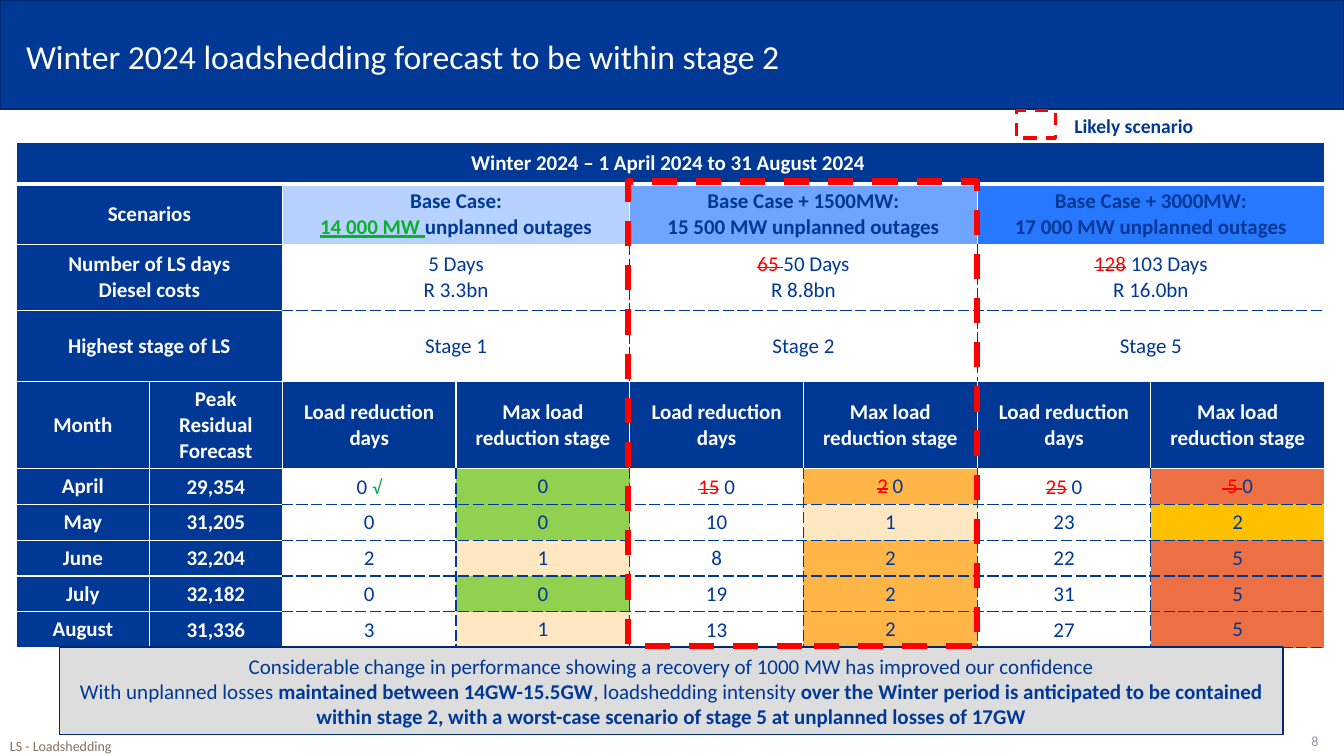
from lxml.etree import SubElement
from pptx import Presentation
from pptx.dml.color import RGBColor
from pptx.enum.dml import MSO_LINE as Dash
from pptx.enum.shapes import MSO_SHAPE as Preset
from pptx.enum.text import MSO_ANCHOR as Anchor, PP_ALIGN as Align
from pptx.oxml.ns import qn
from pptx.util import Pt

COLORS = {
    "navy": "003896", "outline": "00296F", "white": "FFFFFF", "red": "FF0000",
    "grey": "DDDDDD", "brown": "83725B", "lilac": "8C91B8", "lime": "0DAF2B",
    "check": "00B050", "pale": "B7D2FF", "sky": "6FA5FF", "azure": "2778FF",
    "green": "92D050", "cream": "FFE7C1", "orange": "FFB646", "amber": "FFC000",
    "rust": "EC7043",
}


class SlideBuilder:
    """Hold the deck style and the slide being built."""

    font_name = "Calibri"

    def __init__(self, presentation):
        self.slide = presentation.slides.add_slide(presentation.slide_layouts[6])

    def color(self, name):
        return RGBColor.from_string(COLORS[name])

    def set_text(self, frame, paragraphs, size=15, color="navy", bold=False, align=Align.CENTER):
        for index, content in enumerate(paragraphs):
            paragraph = frame.add_paragraph() if index else frame.paragraphs[0]
            paragraph.alignment = align
            font = paragraph.font
            font.name, font.size, font.bold = self.font_name, Pt(size), bold
            font.color.rgb = self.color(color)
            for piece in [content] if isinstance(content, str) else content:
                text, style = (piece, {}) if isinstance(piece, str) else piece
                run = paragraph.add_run()
                run.text = text
                if "color" in style:
                    run.font.color.rgb = self.color(style["color"])
                if "size" in style:
                    run.font.size = Pt(style["size"])
                if "bold" in style:
                    run.font.bold = style["bold"]
                if "underline" in style:
                    run.font.underline = True
                if "strike" in style:
                    run._r.get_or_add_rPr().set("strike", "sngStrike")

    def text(self, box, content, anchor=Anchor.TOP, spacing=None, **style):
        frame = self.slide.shapes.add_textbox(*map(Pt, box)).text_frame
        frame.word_wrap = True
        frame.vertical_anchor = anchor
        self.set_text(frame, [content], **style)
        frame.paragraphs[0].line_spacing = spacing

    def rectangle(self, box, line, width=1, fill=None, dash=None, paragraphs=()):
        shape = self.slide.shapes.add_shape(Preset.RECTANGLE, *map(Pt, box))
        shape.shadow.inherit = False
        if fill:
            shape.fill.solid()
            shape.fill.fore_color.rgb = self.color(fill)
        else:
            shape.fill.background()
        shape.line.color.rgb = self.color(line)
        shape.line.width = Pt(width)
        shape.line.dash_style = dash
        shape.text_frame.vertical_anchor = Anchor.MIDDLE
        self.set_text(shape.text_frame, paragraphs)

    def table(self, left, top, widths, heights):
        box = map(Pt, (left, top, sum(widths), sum(heights)))
        table = self.slide.shapes.add_table(len(heights), len(widths), *box).table
        table.first_row = table.horz_banding = False
        for column, width in zip(table.columns, widths):
            column.width = Pt(width)
        for row, height in zip(table.rows, heights):
            row.height = Pt(height)
        return table

    def cell(self, table, row, column, paragraphs, fill, sides, span=1, tight=False,
             bottom=1, **style):
        cell = table.cell(row, column)
        if span > 1:
            cell.merge(table.cell(row, column + span - 1))
        for offset in range(span):
            self.borders(table.cell(row, column + offset), fill, sides, bottom)
        cell.fill.solid()
        cell.fill.fore_color.rgb = self.color(fill)
        cell.vertical_anchor = Anchor.MIDDLE
        if tight:
            cell.margin_left = cell.margin_right = cell.margin_top = Pt(0.72)
            cell.margin_bottom = 0
        self.set_text(cell.text_frame, paragraphs, **style)

    def borders(self, cell, fill, sides, bottom):
        solid = fill in ("navy", "pale", "sky", "azure")
        properties = cell._tc.get_or_add_tcPr()
        for side in sides:
            width = bottom if side == "B" else 1
            line = SubElement(properties, qn(f"a:ln{side}"), w=str(int(Pt(width))))
            paint = SubElement(line, qn("a:solidFill"))
            SubElement(paint, qn("a:srgbClr"), val=COLORS["white" if solid else "navy"])
            SubElement(line, qn("a:prstDash"), val="solid" if solid else "sysDash")


def struck(text, color="red"):
    return text, {"color": color, "strike": True}


SCENARIOS = [
    ("pale", ["Base Case:",
              [("14 000 MW ", {"color": "lime", "underline": True}), "unplanned outages"]],
     ["5 Days", "R 3.3bn"], "Stage 1"),
    ("sky", ["Base Case + 1500MW:", "15 500 MW unplanned outages"],
     [[struck("65"), struck(" ", "navy"), "50 Days"], "R 8.8bn"], "Stage 2"),
    ("azure", ["Base Case + 3000MW:", "17 000 MW unplanned outages"],
     [[struck("128"), " 103 Days"], "R 16.0bn"], "Stage 5"),
]
MONTHS = [
    ("April", "29,354", ["0 ", ("√", {"color": "check", "size": 14})], "0",
     [struck("15"), " 0"], [struck("2"), " 0"], [struck("25"), " 0"], [struck(" 5 "), "0"]),
    ("May", "31,205", "0", "0", "10", "1", "23", "2"),
    ("June", "32,204", "2", "1", "8", "2", "22", "5"),
    ("July", "32,182", "0", "0", "19", "2", "31", "5"),
    ("August", "31,336", "3", "1", "13", "2", "27", "5"),
]
STAGE_FILLS = [
    ("green", "orange", "rust"), ("green", "cream", "amber"), ("cream", "orange", "rust"),
    ("green", "orange", "rust"), ("cream", "orange", "rust"),
]


def add_forecast(builder):
    table = builder.table(11.7, 101.7, [95] * 2 + [124.1] * 6,
                          [29.5, 43.7, 46.8, 51.1, 61.9] + [25.6] * 5)
    header = {"fill": "navy", "color": "white", "bold": True}
    builder.cell(table, 0, 0, ["Winter 2024 – 1 April 2024 to 31 August 2024 "],
                 sides="LRTB", span=8, bottom=3, **header)
    for row, label in enumerate((["Scenarios"], ["Number of LS days", "Diesel costs"],
                                 ["Highest stage of LS"]), 1):
        builder.cell(table, row, 0, label, sides="LRTB", span=2, **header)
    for index, (fill, title, costs, stage) in enumerate(SCENARIOS):
        column = 2 + 2 * index
        edges = ("R", "LR", "L")[index]
        builder.cell(table, 1, column, title, fill, "LRT", span=2, bold=True)
        builder.cell(table, 2, column, costs, "white", edges + "B", span=2)
        builder.cell(table, 3, column, [stage], "white", edges + "T", span=2)
    titles = ["Month", "Peak Residual Forecast"] + ["Load reduction days",
                                                    "Max load reduction stage"] * 3
    for column, title in enumerate(titles):
        builder.cell(table, 4, column, [title], sides="LRTB" if column < 2 else "LR", **header)
    for row, (month, fills) in enumerate(zip(MONTHS, STAGE_FILLS), 5):
        for column, value in enumerate(month):
            tight = column in (1, 2, 4, 6)
            if column < 2:
                builder.cell(table, row, column, [value], sides=("LRTB", "LTB")[column],
                             tight=tight, **header)
                continue
            fill = fills[column // 2 - 1] if column % 2 else "white"
            edges = {2: "R", 7: "L"}.get(column, "LR")
            builder.cell(table, row, column, [value], fill,
                         edges + ("B" if row == 5 else "TB"), tight=tight)


def main():
    presentation = Presentation()
    presentation.slide_width, presentation.slide_height = Pt(960), Pt(540)
    builder = SlideBuilder(presentation)
    builder.rectangle((0, 0, 960, 77.8), "outline", fill="navy")
    builder.text((11.5, 15.8, 754.6, 52.6), "Winter 2024 loadshedding forecast to be within stage 2",
                 Anchor.MIDDLE, 0.9, size=24, color="white", align=Align.LEFT)
    add_forecast(builder)
    builder.rectangle((42.5, 462.2, 874.1, 62.6), "outline", fill="grey", paragraphs=[
        "Considerable change in performance showing a recovery of 1000 MW has improved our confidence",
        ["With unplanned losses ", ("maintained between 14GW-15.5GW", {"bold": True}),
         ", loadshedding intensity ",
         ("over the Winter period is anticipated to be contained within stage 2, "
          "with a worst-case scenario of stage 5 at unplanned losses of 17GW", {"bold": True})]])
    builder.text((872.6, 511.9, 76.3, 34.6), "8", Anchor.MIDDLE,
                 size=10, color="lilac", align=Align.RIGHT)
    builder.text((0, 523.4, 960, 19.4), "LS - Loadshedding",
                 size=10, color="brown", align=Align.LEFT)
    builder.rectangle((448.6, 129.6, 249.1, 331.9), "red", 4.5, dash=Dash.DASH)
    builder.rectangle((725.8, 79.2, 28.1, 19.4), "red", 2.25, dash=Dash.DASH)
    builder.text((760.3, 77.8, 150.5, 24.5), "Likely scenario",
                 size=14, bold=True, align=Align.LEFT)
    presentation.save("out.pptx")


if __name__ == "__main__":
    main()
